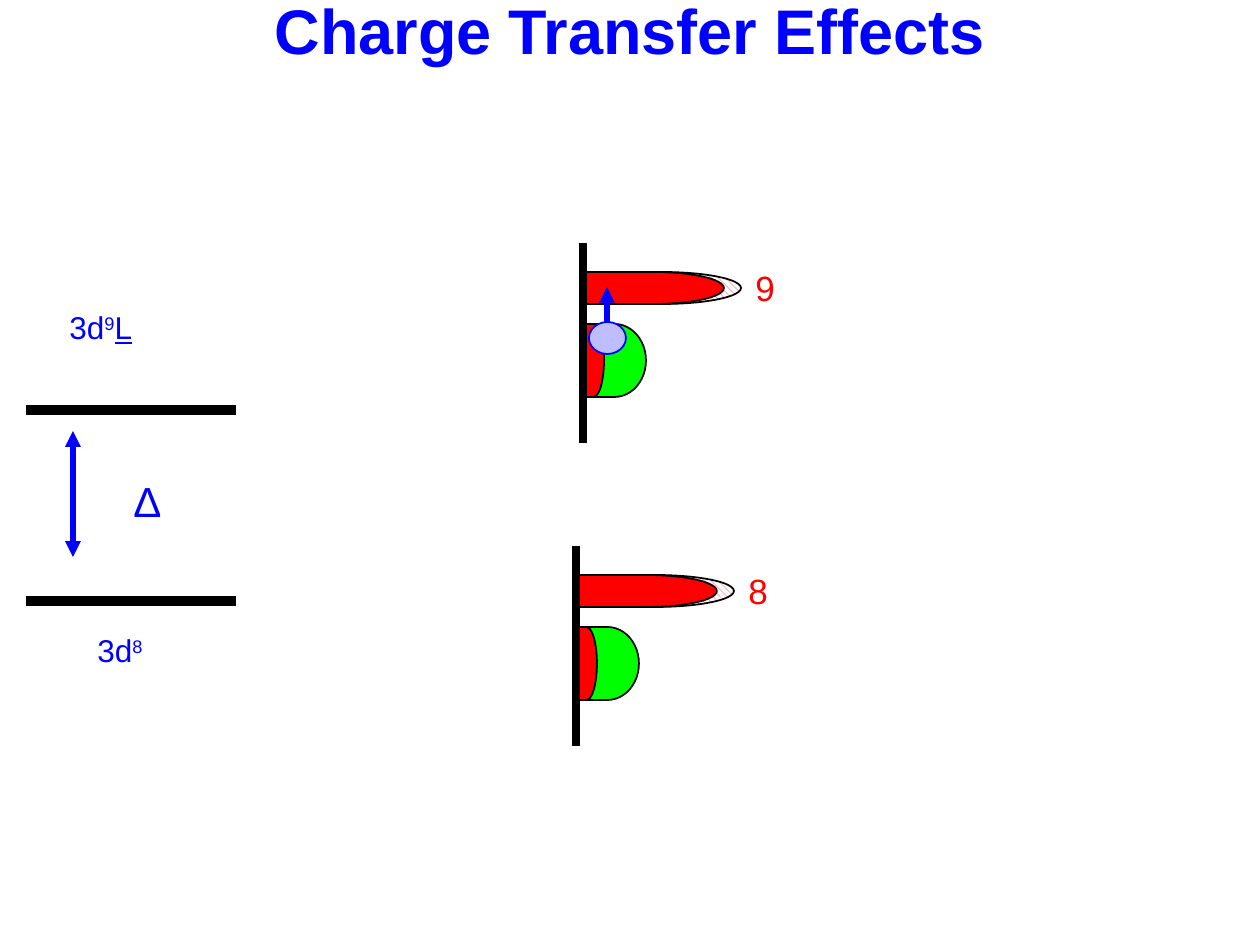
from lxml import etree
from pptx import Presentation
from pptx.dml.color import RGBColor
from pptx.enum.dml import MSO_PATTERN
from pptx.enum.shapes import MSO_CONNECTOR, MSO_SHAPE
from pptx.enum.text import PP_ALIGN
from pptx.oxml.ns import qn
from pptx.util import Emu, Pt

PX = 914400 / 126
BLACK = RGBColor(0, 0, 0)
WHITE = RGBColor(255, 255, 255)
BLUE = RGBColor(0, 0, 255)
RED = RGBColor(255, 0, 0)
GREEN = RGBColor(0, 255, 0)
LILAC = RGBColor(0xBD, 0xBD, 0xFF)
STRAIGHT = MSO_CONNECTOR.STRAIGHT
BAND, OVAL = MSO_SHAPE.FLOWCHART_DELAY, MSO_SHAPE.OVAL
HATCH = MSO_PATTERN.WIDE_DOWNWARD_DIAGONAL
LEFT, CENTER, RIGHT = PP_ALIGN.LEFT, PP_ALIGN.CENTER, PP_ALIGN.RIGHT


def px(*lengths):
    """Turn pixel lengths into EMU."""
    return [Emu(round(n * PX)) for n in lengths]


def add_line(shapes, x1, y1, x2, y2, color, width, ends=()):
    """Draw a straight line: square caps, or arrowheads at the given ends."""
    line = shapes.add_connector(STRAIGHT, *px(x1, y1, x2, y2))
    line.line.color.rgb = color
    line.line.width = Pt(width)
    ln = line.line._get_or_add_ln()
    if not ends:
        ln.set("cap", "sq")
    for end in ends:
        etree.SubElement(ln, qn(f"a:{end}"), type="triangle")
    etree.SubElement(line._element.spPr, qn("a:effectLst"))


def add_shape(shapes, kind, x, y, w, h, fill, line=BLACK):
    """Draw an outlined shape; no fill colour gives a red hatch."""
    sp = shapes.add_shape(kind, *px(x, y, w, h))
    sp.shadow.inherit = False
    if fill is None:
        sp.fill.patterned()
        sp.fill.pattern = HATCH
        sp.fill.fore_color.rgb = RED
        sp.fill.back_color.rgb = WHITE
    else:
        sp.fill.solid()
        sp.fill.fore_color.rgb = fill
    sp.line.color.rgb = line
    sp.line.width = Pt(1)


def add_text(shapes, x, y, w, h, parts, size, color=BLUE, align=LEFT):
    """Write one paragraph of runs and return it."""
    tf = shapes.add_textbox(*px(x, y, w, h)).text_frame
    tf.word_wrap = True
    p = tf.paragraphs[0]
    p.alignment = align
    for part in parts:
        r = p.add_run()
        r.text = part
        r.font.name = "Arial"
        r.font.size = Pt(size)
        r.font.color.rgb = color
    return p


def add_title(shapes, x, y, w, h):
    """Write the slide title."""
    p = add_text(shapes, x, y, w, h, ["Charge Transfer Effects"], 36, align=CENTER)
    p.line_spacing = 0.8
    p.runs[0].font.bold = True


def add_levels(shapes, x, y, w, h):
    """Draw the two energy levels, their labels and the gap between them."""
    for level in (y + h, y):
        add_line(shapes, x, level, x + w, level, BLACK, 6)
    add_line(shapes, x + 42, y + 21, x + 42, y + 147, BLUE, 3, ("headEnd", "tailEnd"))
    add_text(shapes, x + 90, y + 59, 50, 63, ["Δ"], 24, align=RIGHT)
    lower = add_text(shapes, x + 54, y + h + 24, 100, 72, ["3d", "8"], 18)
    upper = add_text(shapes, x + 26, y - 108, 126, 72, ["3d", "9", "L"], 18)
    for p in (lower, upper):
        p.runs[1].font._element.set("baseline", "30000")
    upper.runs[2].font.underline = True


def add_bands(shapes, x, y, h, count):
    """Draw one group of bands on a vertical axis, with its electron count."""
    group = shapes.add_group_shape().shapes
    bands = ((77, 63, 73, GREEN), (25, 158, 32, None),
             (25, 141, 32, RED), (77, 21, 73, RED))
    for top, w, height, fill in bands:
        add_shape(group, BAND, x, y + top, w, height, fill)
    add_line(group, x, y, x, y + h, BLACK, 4.5)
    add_text(group, x + 160, y + 13, 40, 55, [count], 20, RED)


def add_transfer(shapes, x, y, w, h):
    """Draw the moving electron below its arrow."""
    middle, ball = x + w // 2, 32
    add_line(shapes, middle, y + h - ball, middle, y, BLUE, 3, ("tailEnd",))
    add_shape(shapes, OVAL, x, y + h - ball, w, ball, LILAC, BLUE)


def main():
    """Build and save the slide."""
    prs = Presentation()
    prs.slide_width, prs.slide_height = px(1260, 945)
    s = prs.slides.add_slide(prs.slide_layouts[6])
    add_levels(s.shapes, 31, 410, 200, 191)
    add_title(s.shapes, 0, 0, 1260, 73)
    add_bands(s.shapes, 583, 247, 192, "9")
    add_bands(s.shapes, 576, 550, 192, "8")
    add_transfer(s.shapes, 589, 287, 37, 67)
    prs.save("out.pptx")


if __name__ == "__main__":
    main()
